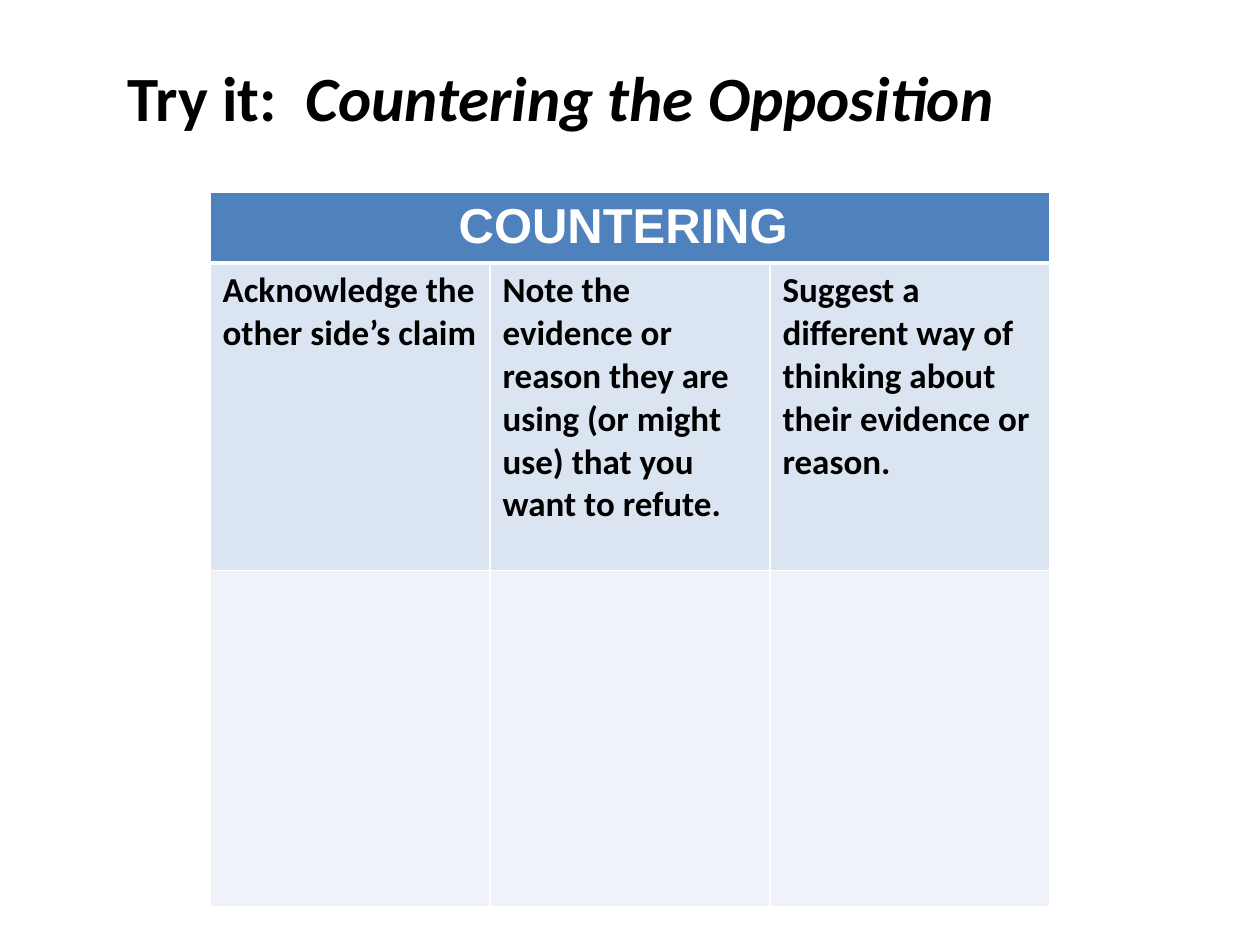
from dataclasses import dataclass

from lxml import etree
from pptx import Presentation
from pptx.dml.color import RGBColor
from pptx.enum.text import PP_ALIGN as Align
from pptx.oxml.ns import qn
from pptx.util import Pt

WHITE, BLACK = "FFFFFF", "000000"
COLUMN_WIDTH = 160


@dataclass
class Row:
    height: float
    fill: str
    texts: tuple[str, ...]
    size: float = 20
    font: str = "Calibri"
    color: str = BLACK
    align: Align = Align.LEFT
    rule: float = 1  # weight of the line below


ROWS = [
    Row(40.3, "4F81BD", ("COUNTERING ", "", ""), 28, "Arial", WHITE, Align.CENTER, 3),
    Row(175.7, "DBE5F1", (
        "Acknowledge the other side’s claim",
        "Note the evidence or reason they are using (or might use) that you want to refute.",
        "Suggest a different way of thinking about their evidence or reason.",
    )),
    Row(192, "EFF3F9", ("", "", "")),
]


def rgb(value: str) -> RGBColor:
    return RGBColor.from_string(value)


def set_font(p, name: str, size: float, color: str) -> None:
    p.font.name, p.font.size, p.font.bold = name, Pt(size), True
    p.font.color.rgb = rgb(color)


def set_borders(cell, top: float, bottom: float) -> None:
    tc_pr = cell._tc.get_or_add_tcPr()
    weights = {"a:lnL": 1, "a:lnR": 1, "a:lnT": top, "a:lnB": bottom}
    # Borders come before the fill in the cell properties
    for i, (tag, weight) in enumerate(weights.items()):
        ln = etree.Element(qn(tag), w=str(Pt(weight)))
        fill = etree.SubElement(ln, qn("a:solidFill"))
        etree.SubElement(fill, qn("a:srgbClr"), val=WHITE)
        tc_pr.insert(i, ln)


def draw_row(table, index: int, row: Row) -> None:
    table.rows[index].height = Pt(row.height)
    top = ROWS[index - 1].rule if index else 1
    for cell, text in zip(table.rows[index].cells, row.texts):
        cell.fill.solid()
        cell.fill.fore_color.rgb = rgb(row.fill)
        set_borders(cell, top, row.rule)
        if text:
            cell.text = text
            p = cell.text_frame.paragraphs[0]
            p.alignment = row.align
            set_font(p, row.font, row.size, row.color)


prs = Presentation()
prs.slide_width, prs.slide_height = Pt(720), Pt(540)
s = prs.slides.add_slide(prs.slide_layouts[6])

# Countering table
columns = len(ROWS[0].texts)
table = s.shapes.add_table(
    len(ROWS), columns, Pt(120), Pt(110),
    Pt(columns * COLUMN_WIDTH), Pt(sum(row.height for row in ROWS)),
).table
for column in table.columns:
    column.width = Pt(COLUMN_WIDTH)
for index, row in enumerate(ROWS):
    draw_row(table, index, row)
table.cell(0, 0).merge(table.cell(0, columns - 1))

# Title
tf = s.shapes.add_textbox(Pt(66), Pt(30), Pt(552), Pt(51)).text_frame
tf.word_wrap = True
p = tf.paragraphs[0]
set_font(p, "Calibri", 36, BLACK)
p.add_run().text = "Try it:  "
r = p.add_run()
r.text = "Countering the Opposition"
r.font.italic = True

prs.save("out.pptx")
